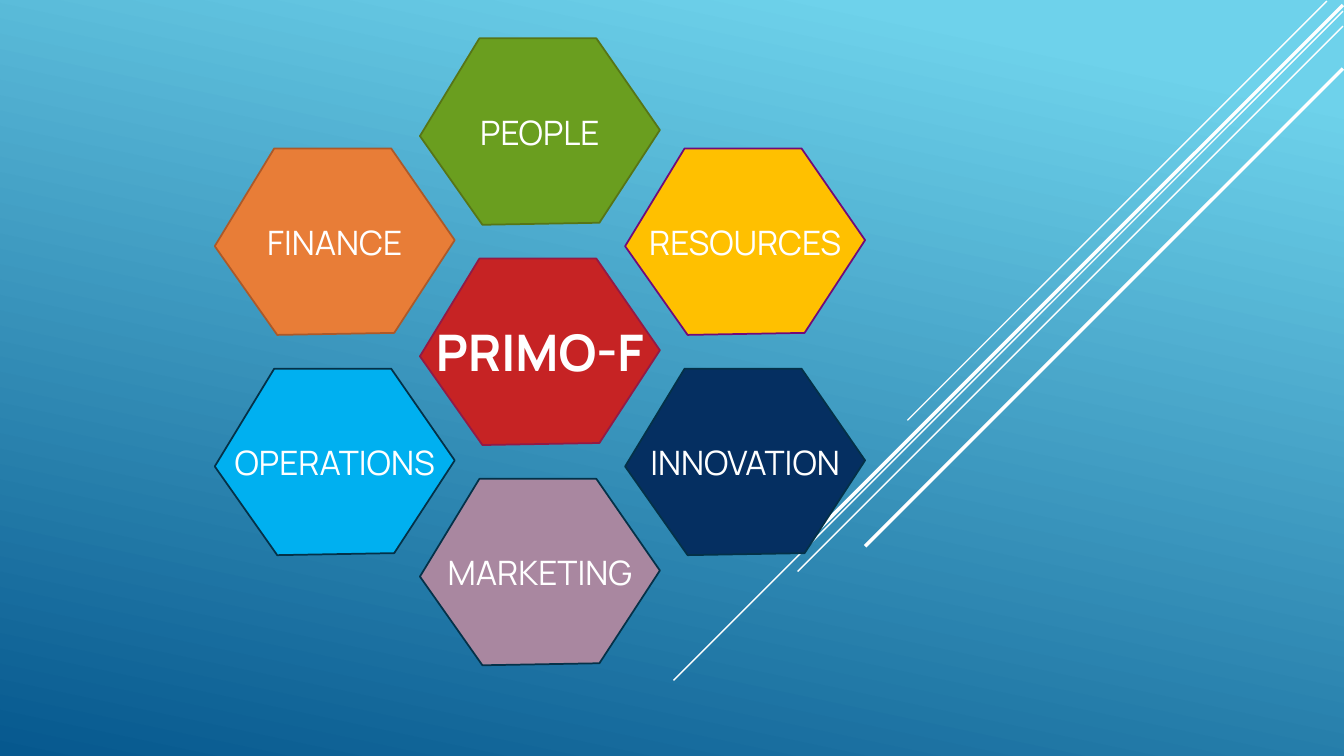
from lxml.etree import SubElement
from pptx import Presentation
from pptx.dml.color import RGBColor
from pptx.enum.shapes import MSO_CONNECTOR
from pptx.enum.text import MSO_ANCHOR, PP_ALIGN
from pptx.oxml.ns import qn
from pptx.util import Inches, Pt

FONT = "Manrope"
WHITE = "FFFFFF"
WIDTH, HEIGHT = 13.33, 7.5
GRADIENT = [(0.1, "6ED2EB"), (1, "06588E")]

EDGE = WIDTH - 0.01
STRIPES = [
    ((13.16, 0.01), 4.16, 1),
    ((EDGE, 0.11), 6.64, 1),
    ((EDGE, 0.26), 5.41, 1),
    ((EDGE, 0.05), 5.3, 2.5),
    ((EDGE, 0.68), 4.74, 2.5),
]

HEXAGONS = [
    ("FINANCE", 0, 1, "E87D37", "AC5929", 24, False),
    ("OPERATIONS", 0, 3, "00B0F0", "043148", 24, False),
    ("PEOPLE", 1, 0, "6A9E1F", "567517", 24, False),
    ("MARKETING", 1, 4, "A987A0", "043148", 24, False),
    ("RESOURCES", 2, 1, "FFC000", "710A7A", 24, False),
    ("INNOVATION", 2, 3, "052F61", "043148", 24, False),
    ("PRIMO-F", 1, 2, "C62324", "921A46", 36, True),
]
LEFT, TOP = 2.13, 0.38
COLUMN_STEP, ROW_STEP = (6.2 - LEFT) / 2, (4.75 - TOP) / 4
CORNERS = [(0.59, 0), (1.75, 0), (2.38, 0.91), (1.78, 1.83), (0.62, 1.85), (0, 0.97)]


def color(hex_value):
    return RGBColor.from_string(hex_value)


def paint_background(page):
    fill = page.background.fill
    fill.gradient()
    fill.gradient_angle = 360 - 102
    for stop, (position, hex_value) in zip(fill.gradient_stops, GRADIENT):
        stop.position = position
        stop.color.rgb = color(hex_value)


def add_stripe(page, start, run, weight):
    x, y = start
    ends = [Inches(value) for value in (x, y, x - run, y + run)]
    stripe = page.shapes.add_connector(MSO_CONNECTOR.STRAIGHT, *ends)
    stripe.line.color.rgb = color(WHITE)
    stripe.line.width = Pt(weight)
    SubElement(stripe._element.spPr, qn("a:effectLst"))


def add_hexagon(page, label, column, row, fill, outline, size, bold):
    left, top = LEFT + column * COLUMN_STEP, TOP + row * ROW_STEP
    points = [(Inches(left + x), Inches(top + y)) for x, y in CORNERS]
    builder = page.shapes.build_freeform(*points[0])
    builder.add_line_segments(points[1:], close=True)
    hexagon = builder.convert_to_shape()
    hexagon.shadow.inherit = False
    hexagon.fill.solid()
    hexagon.fill.fore_color.rgb = color(fill)
    hexagon.line.color.rgb = color(outline)
    hexagon.line.width = Pt(1.25)

    frame = hexagon.text_frame
    frame.word_wrap = False
    frame.vertical_anchor = MSO_ANCHOR.MIDDLE
    frame.margin_left = frame.margin_right = 0
    frame.margin_top = frame.margin_bottom = 0
    para = frame.paragraphs[0]
    para.alignment = PP_ALIGN.CENTER
    span = para.add_run()
    span.text = label
    span.font.name = FONT
    span.font.size = Pt(size)
    span.font.bold = bold
    span.font.color.rgb = color(WHITE)


def main():
    deck = Presentation()
    deck.slide_width, deck.slide_height = Inches(WIDTH), Inches(HEIGHT)
    page = deck.slides.add_slide(deck.slide_layouts[6])
    paint_background(page)
    for stripe in STRIPES:
        add_stripe(page, *stripe)
    for hexagon in HEXAGONS:
        add_hexagon(page, *hexagon)
    deck.save("out.pptx")


if __name__ == "__main__":
    main()
